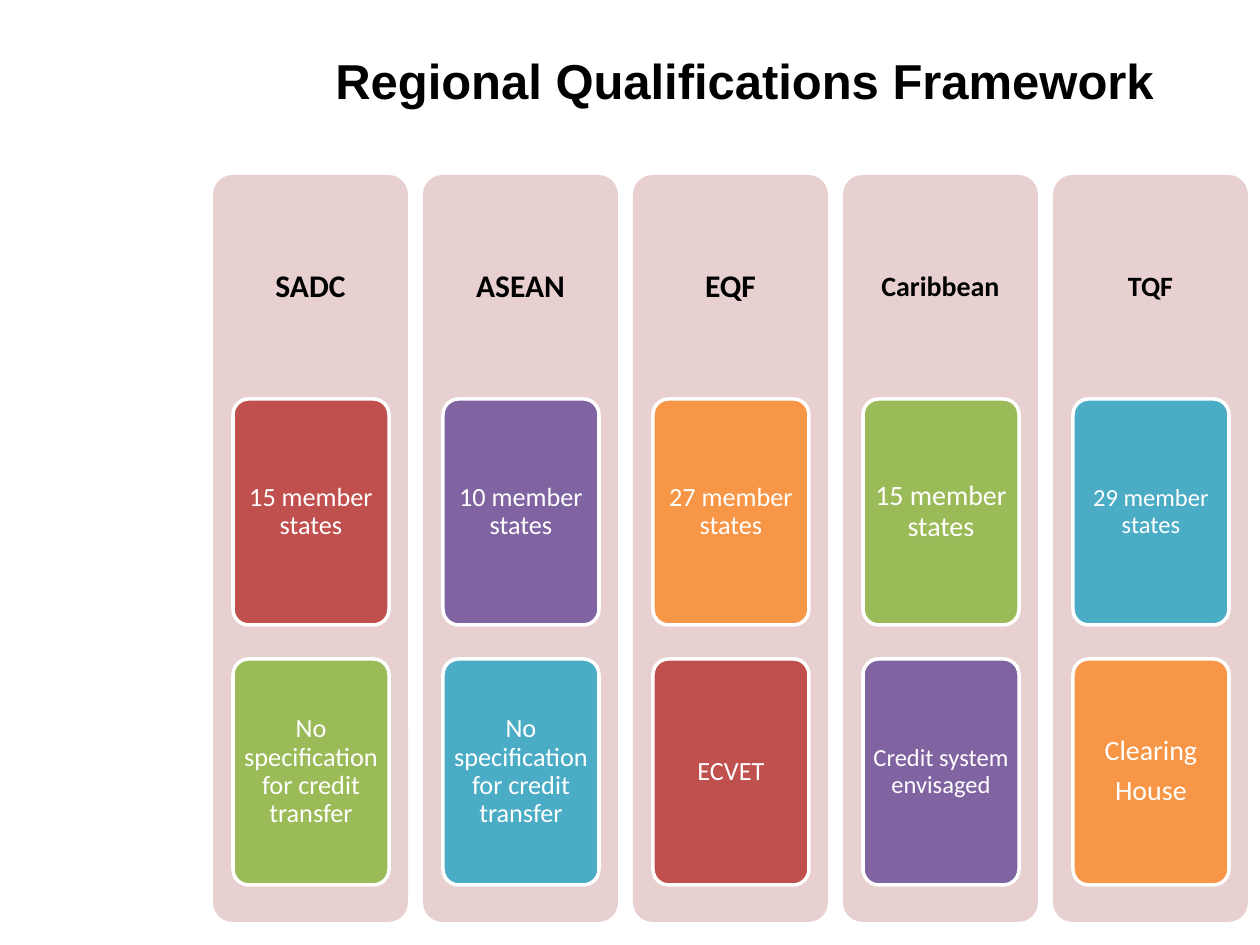
from pptx import Presentation
from pptx.dml.color import RGBColor
from pptx.enum.shapes import MSO_SHAPE
from pptx.enum.text import MSO_ANCHOR, PP_ALIGN
from pptx.util import Emu, Pt

PX = 914400 // 126

BLACK = RGBColor(0x00, 0x00, 0x00)
WHITE = RGBColor(0xFF, 0xFF, 0xFF)
PINK = RGBColor(0xE8, 0xD0, 0xD0)
RED = RGBColor(0xC0, 0x50, 0x4D)
GREEN = RGBColor(0x9B, 0xBB, 0x59)
PURPLE = RGBColor(0x80, 0x64, 0xA2)
TEAL = RGBColor(0x4B, 0xAC, 0xC6)
ORANGE = RGBColor(0xF7, 0x96, 0x46)

# Column grid
LEFT, TOP, PITCH = 213, 175, 210
COLUMN_W, COLUMN_H, HEADER_H = 195, 747, 224
CARD_W, CARD_H, CARD_TOP, CARD_PITCH = 156, 226, 399, 260

# Heading, heading size, then cards of (text, size, fill)
FRAMEWORKS = [
    ("SADC", 18, [("15 member states", 15, RED),
                  ("No specification for credit transfer", 15, GREEN)]),
    ("ASEAN", 18, [("10 member states", 15, PURPLE),
                   ("No specification for credit transfer", 15, TEAL)]),
    ("EQF", 18, [("27 member states", 15, ORANGE), ("ECVET", 15, RED)]),
    ("Caribbean", 16, [("15 member states", 16, GREEN),
                       ("Credit system envisaged", 14, PURPLE)]),
    ("TQF", 16, [("29 member states", 14, TEAL),
                 ("Clearing\nHouse", 16, ORANGE)]),
]


def px(*lengths):
    return [Emu(n * PX) for n in lengths]


def set_text(sp, text, size, color, margins, bold=False):
    tf = sp.text_frame
    tf.text = text
    tf.word_wrap = True
    tf.vertical_anchor = MSO_ANCHOR.MIDDLE
    tf.margin_left = tf.margin_right = Emu(margins[0] * PX)
    tf.margin_top = tf.margin_bottom = Emu(margins[1] * PX)
    for p in tf.paragraphs:
        p.alignment = PP_ALIGN.CENTER
        p.line_spacing = 0.9
        p.space_after = Pt(size * 0.35)
        for r in p.runs:
            format_run(r, "Calibri", size, color, bold)


def format_run(r, name, size, color, bold):
    r.font.name = name
    r.font.size = Pt(size)
    r.font.bold = bold
    r.font.color.rgb = color


def add_panel(slide, x, y, w, h, fill, line=None):
    sp = slide.shapes.add_shape(MSO_SHAPE.ROUNDED_RECTANGLE, *px(x, y, w, h))
    sp.adjustments[0] = 0.1
    sp.shadow.inherit = False
    sp.fill.solid()
    sp.fill.fore_color.rgb = fill
    if line is None:
        sp.line.fill.background()
    else:
        sp.line.color.rgb = line
        sp.line.width = Pt(2)
    return sp


def add_column(slide, x, heading, size, cards):
    add_panel(slide, x, TOP, COLUMN_W, COLUMN_H, PINK)
    box = slide.shapes.add_textbox(*px(x, TOP, COLUMN_W, HEADER_H))
    set_text(box, heading, size, BLACK, (9, 9), bold=True)
    card_x = x + (COLUMN_W - CARD_W) // 2 + 1
    for row, (text, card_size, fill) in enumerate(cards):
        y = CARD_TOP + row * CARD_PITCH
        card = add_panel(slide, card_x, y, CARD_W, CARD_H, fill, WHITE)
        set_text(card, text, card_size, WHITE, (5, 4))


def add_title(slide, text):
    box = slide.shapes.add_textbox(*px(323, 35, 854, 81))
    tf = box.text_frame
    tf.text = text
    tf.word_wrap = False
    p = tf.paragraphs[0]
    p.alignment = PP_ALIGN.JUSTIFY
    p.line_spacing = 1.15
    format_run(p.runs[0], "Arial", 28, BLACK, True)


def main():
    prs = Presentation()
    prs.slide_width, prs.slide_height = px(1260, 945)
    slide = prs.slides.add_slide(prs.slide_layouts[6])

    # Framework columns
    for i, framework in enumerate(FRAMEWORKS):
        add_column(slide, LEFT + i * PITCH, *framework)

    # Title
    add_title(slide, "Regional Qualifications Framework")
    prs.save("out.pptx")


if __name__ == "__main__":
    main()
